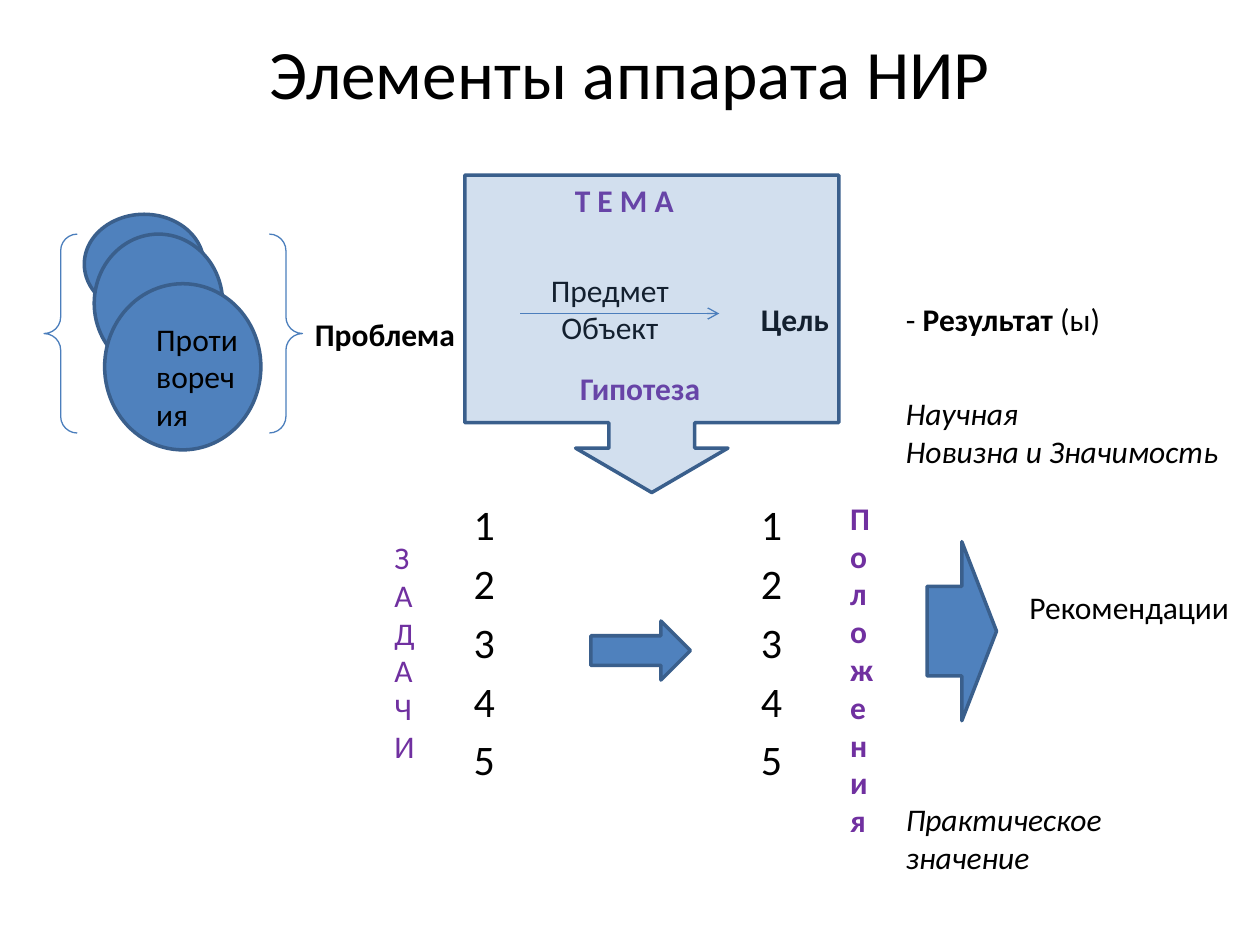
"""Builds a slide on the elements of a research framework."""
from lxml import etree
from pptx import Presentation
from pptx import util as u
from pptx.dml.color import RGBColor
from pptx.enum import shapes, text
from pptx.oxml.ns import qn

SHAPE = shapes.MSO_SHAPE
CENTER = text.PP_ALIGN.CENTER
BLUE, EDGE, THIN_EDGE = "4F81BD", "3A5F8C", "4B7EBC"
BLACK, PURPLE = "000000", "7030A0"


def color(hex_code):
    return RGBColor.from_string(hex_code)


class Board:
    """Holds the style and the current slide."""

    font_name = "Calibri"

    def __init__(self, slide):
        self.slide = slide

    def shape(self, kind, left, top, width, height, fill=BLUE, edge=EDGE,
              weight=2, adjustments=(), opacity=None):
        figure = self.slide.shapes.add_shape(
            kind, u.Cm(left), u.Cm(top), u.Cm(width), u.Cm(height))
        figure.shadow.inherit = False
        for index, value in enumerate(adjustments):
            figure.adjustments[index] = value
        if fill:
            figure.fill.solid()
            figure.fill.fore_color.rgb = color(fill)
        else:
            figure.fill.background()
        if opacity:
            tint = figure.fill._xPr.find(".//" + qn("a:srgbClr"))
            etree.SubElement(tint, qn("a:alpha"), val=str(opacity * 1000))
        figure.line.color.rgb = color(edge)
        figure.line.width = u.Pt(weight)

    def style(self, run, size=18, ink=BLACK, bold=False, italic=False):
        run.font.name = self.font_name
        run.font.size = u.Pt(size)
        run.font.color.rgb = color(ink)
        run.font.bold = bold
        run.font.italic = italic

    def text(self, words, left, top, width, height=1.02, align=None,
             anchor=text.MSO_ANCHOR.TOP, space_before=0, **look):
        box = self.slide.shapes.add_textbox(
            u.Cm(left), u.Cm(top), u.Cm(width), u.Cm(height))
        frame = box.text_frame
        frame.word_wrap = True
        frame.vertical_anchor = anchor
        frame.text = words
        for paragraph in frame.paragraphs:
            paragraph.alignment = align
            paragraph.space_before = u.Pt(space_before)
            for run in paragraph.runs:
                self.style(run, **look)
        return frame.paragraphs[0]

    def append(self, paragraph, words, **look):
        run = paragraph.add_run()
        run.text = words
        self.style(run, **look)

    def arrow(self, start_x, start_y, end_x, end_y):
        link = self.slide.shapes.add_connector(
            shapes.MSO_CONNECTOR.STRAIGHT,
            u.Cm(start_x), u.Cm(start_y), u.Cm(end_x), u.Cm(end_y))
        link.line.color.rgb = color(THIN_EDGE)
        link.line.width = u.Pt(0.75)
        etree.SubElement(link.line._get_or_add_ln(), qn("a:tailEnd"), type="arrow")
        etree.SubElement(link._element.spPr, qn("a:effectLst"))


def main():
    deck = Presentation()
    deck.slide_width, deck.slide_height = u.Cm(25.4), u.Cm(19.05)
    board = Board(deck.slides.add_slide(deck.slide_layouts[6]))

    board.text("Элементы аппарата НИР", 1.27, 0.76, 22.86, 1.37, align=CENTER,
               anchor=text.MSO_ANCHOR.MIDDLE, size=39.6)

    for contradiction in ((1.7, 4.32, 2.41, 2.01), (1.9, 4.72, 2.59, 2.79),
                          (2.11, 5.72, 3.15, 3.35)):
        board.shape(SHAPE.OVAL, *contradiction)
    board.shape(SHAPE.DOUBLE_BRACE, 0.89, 4.72, 5.21, 4.01, fill=None,
                edge=THIN_EDGE, weight=0.75)
    board.text("Противоречия", 2.9, 6.32, 2.21, 2.57)
    board.text("Проблема", 6.1, 6.22, 6.2, bold=True)

    board.text("Т Е М А", 10.49, 3.53, 4.19, align=CENTER, ink=PURPLE, bold=True)
    board.text("Предмет Объект", 10.49, 5.33, 3.61, 1.8, align=CENTER)
    board.arrow(10.49, 6.32, 14.5, 6.32)
    board.text("Цель", 15.09, 5.92, 2.31, bold=True)
    board.text("Гипотеза", 11.1, 7.32, 3.61, align=CENTER, ink=PURPLE, bold=True)
    board.shape(SHAPE.DOWN_ARROW_CALLOUT, 9.37, 3.53, 7.54, 6.4, opacity=25,
                adjustments=(0.27, 0.24, 0.14, 0.78))

    numbers = "\n".join(str(number) for number in range(1, 6))
    for column_left in (9.3, 15.09):
        board.text(numbers, column_left, 9.93, 2.21, 7.87, size=24, space_before=4.8)
    board.text("З А Д А Ч И", 7.7, 10.72, 0.99, 4.88, ink=PURPLE)
    board.text("Положения", 16.89, 9.93, 0.99, 7.19, ink=PURPLE, bold=True)
    board.shape(SHAPE.RIGHT_ARROW, 11.91, 12.52, 2.01, 1.19)
    board.shape(SHAPE.RIGHT_ARROW, 18.69, 10.92, 1.4, 3.61)

    result = board.text("- ", 18.01, 5.92, 6.48)
    board.append(result, "Результат", bold=True)
    board.append(result, " (ы)")
    board.text("Научная\nНовизна и Значимость", 18.01, 7.82, 7.39, 1.8, italic=True)
    board.text("Рекомендации", 20.5, 11.73, 4.9)
    board.text("Практическое значение", 18.01, 16, 6.81, 1.8, italic=True)

    deck.save("out.pptx")


if __name__ == "__main__":
    main()
